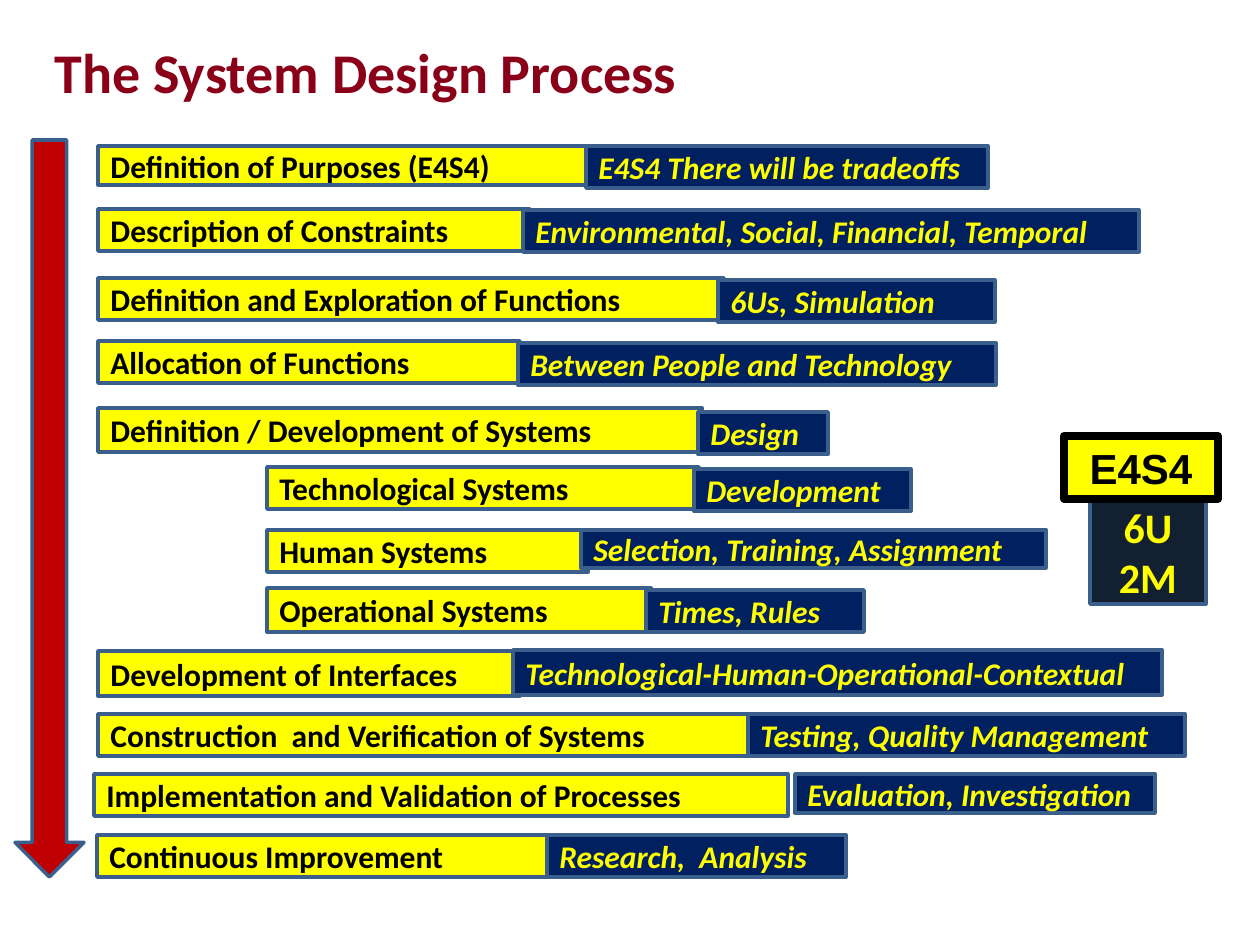
"""Build a slide listing the stages of the system design process."""
from pptx import Presentation
from pptx.dml.color import RGBColor
from pptx.enum.shapes import MSO_SHAPE as Shape
from pptx.enum.text import MSO_ANCHOR as Anchor, PP_ALIGN as Align
from pptx.util import Pt

PX = 914400 / 126
YELLOW, NAVY, BLACK, EDGE = "FFFF00", "002060", "000000", "3A5F8C"


def color(value):
    return RGBColor.from_string(value)


def add_box(box, fill, lines=(), ink=BLACK, size=18, font="Calibri", italic=False,
            align=Align.LEFT, edge=EDGE, weight=2, kind=Shape.RECTANGLE):
    shape = slide.shapes.add_shape(kind, *[round(value * PX) for value in box])
    shape.shadow.inherit = False
    shape.fill.solid()
    shape.fill.fore_color.rgb = color(fill)
    shape.line.color.rgb = color(edge)
    shape.line.width = Pt(weight)
    frame = shape.text_frame
    frame.word_wrap = True
    frame.vertical_anchor = Anchor.MIDDLE
    for index, line in enumerate(lines):
        paragraph = frame.add_paragraph() if index else frame.paragraphs[0]
        paragraph.alignment = align
        run = paragraph.add_run()
        run.text = line
        run.font.name, run.font.size = font, Pt(size)
        run.font.bold, run.font.italic = True, italic
        run.font.color.rgb = color(ink)


presentation = Presentation()
presentation.slide_width = round(1260 * PX)
presentation.slide_height = round(945 * PX)
slide = presentation.slides.add_slide(presentation.slide_layouts[5])

title = slide.shapes.title
title.left, title.top, title.width, title.height = [
    round(value * PX) for value in (42, 32, 1176, 78)]
title.text_frame.vertical_anchor = Anchor.MIDDLE
paragraph = title.text_frame.paragraphs[0]
paragraph.alignment = Align.LEFT
run = paragraph.add_run()
run.text = "The System Design Process"
run.font.name, run.font.size, run.font.bold = "Calibri", Pt(32), True
run.font.color.rgb = color("890018")

stages = [
    ("Definition of Purposes (E4S4)", (98, 146, 495, 39),
     "E4S4 There will be tradeoffs", (586, 146, 402, 42)),
    ("Description of Constraints", (98, 209, 432, 42),
     "Environmental, Social, Financial, Temporal", (523, 210, 616, 42)),
    ("Definition and Exploration of Functions", (98, 278, 626, 42),
     "6Us, Simulation", (718, 280, 277, 42)),
    ("Allocation of Functions", (98, 341, 422, 42),
     "Between People and Technology", (518, 343, 478, 42)),
    ("Definition / Development of Systems", (98, 408, 604, 44),
     "Design", (698, 412, 130, 42)),
    ("Technological Systems", (267, 467, 432, 42),
     "Development", (694, 469, 217, 42)),
    ("Human Systems", (267, 530, 321, 42),
     "Selection, Training, Assignment", (581, 530, 465, 38)),
    ("Operational Systems", (267, 588, 384, 44),
     "Times, Rules", (646, 590, 218, 42)),
    ("Development of Interfaces", (98, 651, 422, 45),
     "Technological-Human-Operational-Contextual", (513, 650, 649, 45)),
    ("Construction  and Verification of Systems", (98, 714, 662, 42),
     "Testing, Quality Management", (748, 714, 437, 42)),
    ("Implementation and Validation of Processes", (94, 774, 694, 42),
     "Evaluation, Investigation", (795, 774, 360, 39)),
    ("Continuous Improvement", (97, 835, 452, 42),
     "Research,  Analysis", (547, 835, 299, 42)),
]
for stage, stage_box, detail, detail_box in stages:
    add_box(stage_box, YELLOW, [stage])
    add_box(detail_box, NAVY, [detail], YELLOW, italic=True)

add_box((15, 140, 69, 737), "C00000", kind=Shape.DOWN_ARROW)
add_box((1090, 499, 116, 105), "122031", ["6U", "2M"], YELLOW, 24, align=Align.CENTER)
add_box((1064, 436, 154, 63), YELLOW, ["E4S4"], BLACK, 24, "Arial",
        align=Align.CENTER, edge=BLACK, weight=4.5)

presentation.save("out.pptx")
